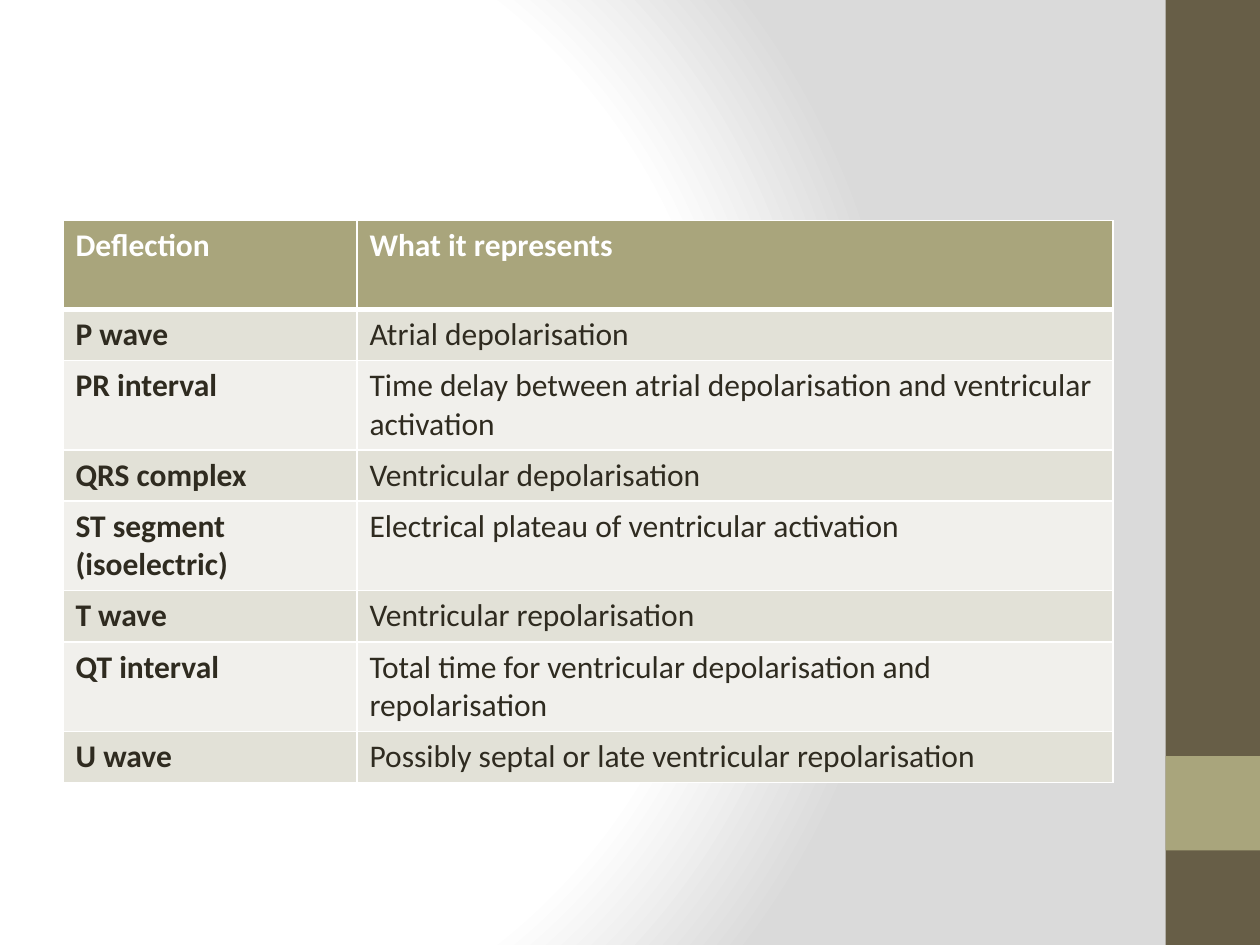
from lxml import etree
from pptx import Presentation
from pptx.dml.color import RGBColor
from pptx.enum.shapes import MSO_SHAPE
from pptx.oxml import parse_xml
from pptx.oxml.ns import nsdecls, qn
from pptx.util import Pt

RECTANGLE = MSO_SHAPE.RECTANGLE
FONT = "Calibri"
COLORS = {
    "white": "FFFFFF", "grey": "DADADA", "brown": "675E47", "olive": "A9A57C",
    "ink": "2F2B20", "band_dark": "E2E1D7", "band_light": "F1F0EC",
}

# Content
HEADER = ("Deflection", "What it represents")
DEFLECTIONS = [
    ("P wave", "Atrial depolarisation"),
    ("PR interval", "Time delay between atrial depolarisation and ventricular activation"),
    ("QRS complex", "Ventricular depolarisation"),
    ("ST segment (isoelectric)", "Electrical plateau of ventricular activation"),
    ("T wave", "Ventricular repolarisation"),
    ("QT interval", "Total time for ventricular depolarisation and repolarisation"),
    ("U wave", "Possibly septal or late ventricular repolarisation"),
]
SIDEBAR = [("brown", 0, 540), ("olive", 432, 54)]  # color, top, height
SIDEBAR_LEFT, SIDEBAR_WIDTH = 666, 54
TABLE_LEFT, TABLE_TOP = 36, 126
COLUMN_WIDTHS = (168, 432)
HEADER_HEIGHT, ROW_HEIGHT = 50.8, 29.2


def rgb(name):
    return RGBColor.from_string(COLORS[name])


def write(frame, text, color="ink", size=18, bold=False):
    run = frame.paragraphs[0].add_run()
    run.text = text
    run.font.name, run.font.size, run.font.bold = FONT, Pt(size), bold
    run.font.color.rgb = rgb(color)


def set_borders(cell, **widths):
    properties = cell._tc.get_or_add_tcPr()
    for position, side in enumerate("LRTB"):
        line = etree.Element(qn(f"a:ln{side}"), w=str(Pt(widths.get(side, 1))))
        fill = etree.SubElement(line, qn("a:solidFill"))
        etree.SubElement(fill, qn("a:srgbClr"), val=COLORS["white"])
        properties.insert(position, line)


def set_background(slide):
    slide.background.fill.gradient()
    gradient = slide.background._cSld.find(".//" + qn("a:gradFill"))
    stops = "".join(
        f'<a:gs pos="{percent * 1000}"><a:srgbClr val="{COLORS[name]}"/></a:gs>'
        for percent, name in [(0, "white"), (75, "white"), (100, "grey")])
    radial = parse_xml(
        f'<a:gradFill {nsdecls("a")} rotWithShape="1"><a:gsLst>{stops}</a:gsLst>'
        '<a:path path="circle"><a:fillToRect l="20000" t="50000" r="100000" b="50000"/>'
        '</a:path></a:gradFill>')
    gradient.getparent().replace(gradient, radial)


def add_sidebar(slide):
    for color, top, height in SIDEBAR:
        block = slide.shapes.add_shape(
            RECTANGLE, Pt(SIDEBAR_LEFT), Pt(top), Pt(SIDEBAR_WIDTH), Pt(height))
        block.shadow.inherit = False
        block.fill.solid()
        block.fill.fore_color.rgb = rgb(color)
        block.line.fill.background()


def add_deflection_table(slide):
    rows = [HEADER] + DEFLECTIONS
    heights = [HEADER_HEIGHT] + [ROW_HEIGHT] * len(DEFLECTIONS)
    table = slide.shapes.add_table(
        len(rows), len(HEADER), Pt(TABLE_LEFT), Pt(TABLE_TOP),
        Pt(sum(COLUMN_WIDTHS)), Pt(sum(heights))).table
    table.horz_banding = False
    for column, width in zip(table.columns, COLUMN_WIDTHS):
        column.width = Pt(width)
    for r, (texts, height) in enumerate(zip(rows, heights)):
        table.rows[r].height = Pt(height)
        is_header = r == 0
        band = "olive" if is_header else "band_dark" if r % 2 else "band_light"
        for c, text in enumerate(texts):
            cell = table.cell(r, c)
            cell.fill.solid()
            cell.fill.fore_color.rgb = rgb(band)
            # Thick rule between the header and the first row
            set_borders(cell, B=3 if is_header else 1, T=3 if r == 1 else 1)
            write(cell.text_frame, text, color="white" if is_header else "ink",
                  bold=is_header or c == 0)


def main():
    deck = Presentation()
    deck.slide_width, deck.slide_height = Pt(720), Pt(540)
    slide = deck.slides.add_slide(deck.slide_layouts[6])
    set_background(slide)
    add_sidebar(slide)
    add_deflection_table(slide)
    deck.save("out.pptx")


if __name__ == "__main__":
    main()
